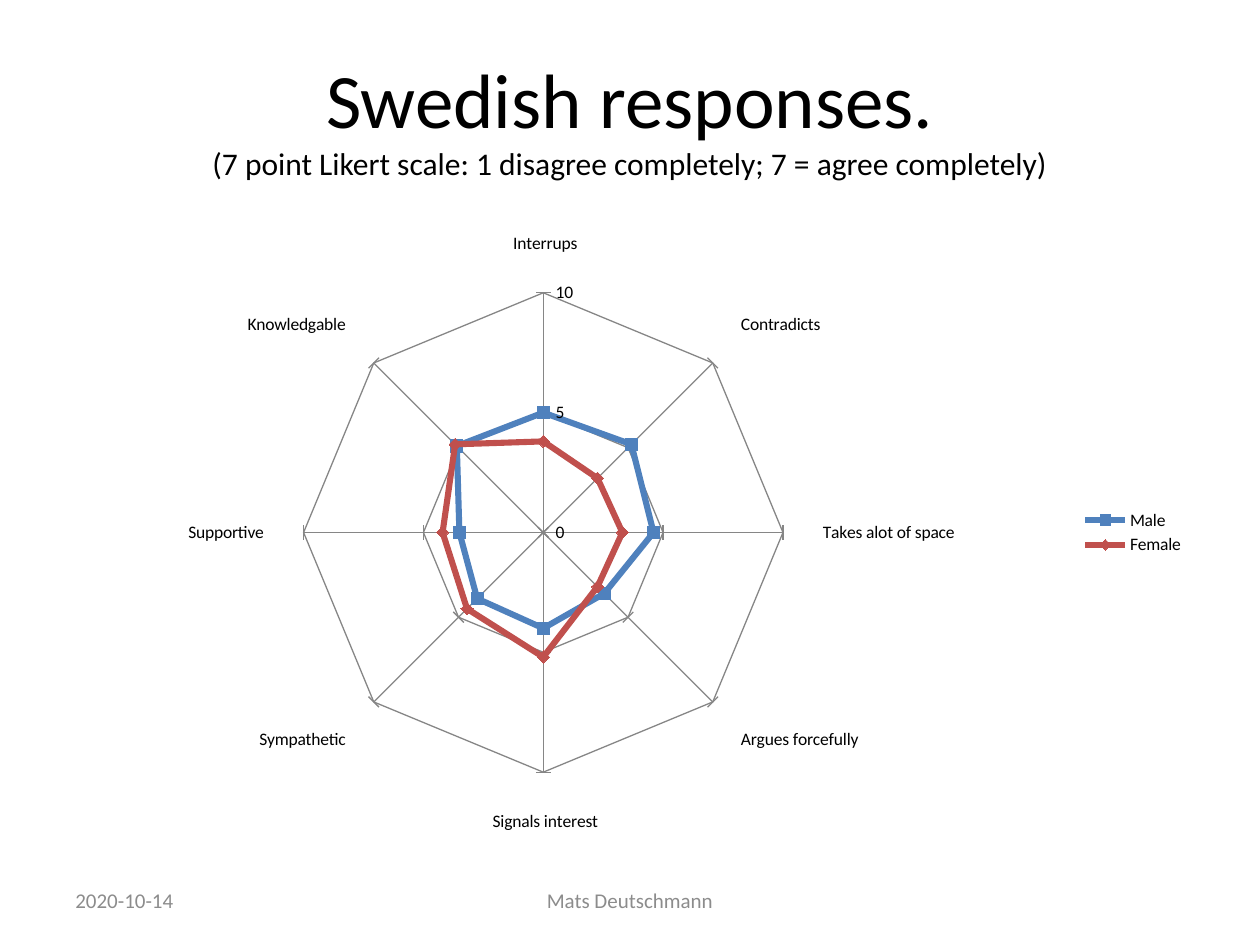
from pptx import Presentation
from pptx.chart.data import CategoryChartData
from pptx.dml.color import RGBColor
from pptx.enum import chart as ch, text
from pptx.util import Cm, Pt

FONT = "Calibri"
BLACK, GREY, GRID = "000000", "8C8C8C", "868686"
TRAITS = [" Interrups", "Contradicts", "Takes alot of space", "Argues forcefully",
          " Signals interest", "Sympathetic", "Supportive", "Knowledgable"]
GROUPS = [
    ("Male", [5, 5.2, 4.6, 3.6, 4, 3.9, 3.5, 5.1], "4F81BD", ch.XL_MARKER_STYLE.SQUARE),
    ("Female", [3.8, 3.2, 3.3, 3.2, 5.2, 4.5, 4.2, 5.2], "C0504D", ch.XL_MARKER_STYLE.DIAMOND),
]


def rgb(code):
    return RGBColor.from_string(code)


def style(font, size, color):
    font.name, font.size = FONT, Pt(size)
    font.color.rgb = rgb(color)


def place(shape, left, top, width, height):
    shape.left, shape.top = Cm(left), Cm(top)
    shape.width, shape.height = Cm(width), Cm(height)


def add_title(slide, head, note):
    title = slide.shapes.title
    place(title, 1.27, 0.76, 22.86, 3.18)
    frame = title.text_frame
    frame.vertical_anchor = text.MSO_ANCHOR.MIDDLE
    par = frame.paragraphs[0]
    par.alignment = text.PP_ALIGN.CENTER
    for size, words in ((44, head), (18, note)):
        if par.runs:
            par.add_line_break()
        run = par.add_run()
        run.text = words
        style(run.font, size, BLACK)


def add_footer(slide, words, left, width, align):
    box = slide.shapes.add_textbox(Cm(left), Cm(17.65), Cm(width), Cm(1.01))
    frame = box.text_frame
    frame.word_wrap = True
    frame.vertical_anchor = text.MSO_ANCHOR.MIDDLE
    par = frame.paragraphs[0]
    par.text, par.alignment = words, align
    style(par.font, 12, GREY)


def style_axis(axis, tick):
    axis.has_major_gridlines = True
    axis.major_tick_mark = tick
    axis.minor_tick_mark = ch.XL_TICK_MARK.NONE
    for part in (axis, axis.major_gridlines):
        part.format.line.color.rgb = rgb(GRID)
        part.format.line.width = Pt(0.75)


def style_series(series, color, mark):
    line = series.format.line
    line.color.rgb, line.width = rgb(color), Pt(3.5)
    marker = series.marker
    marker.style, marker.size = mark, 7
    marker.format.fill.solid()
    marker.format.fill.fore_color.rgb = rgb(color)
    marker.format.line.color.rgb = rgb(color)


def add_radar(slide):
    data = CategoryChartData()
    data.categories = TRAITS
    for name, vals, *_ in GROUPS:
        data.add_series(name, vals)
    chart = slide.shapes.add_chart(ch.XL_CHART_TYPE.RADAR_MARKERS, Cm(1.27), Cm(4.45),
                                   Cm(22.86), Cm(12.57), data).chart
    style(chart.font, 10, BLACK)
    chart.has_title = False
    chart.has_legend = True
    chart.legend.position = ch.XL_LEGEND_POSITION.RIGHT
    chart.legend.include_in_layout = False
    plot = chart.plots[0]
    plot.vary_by_categories = False
    for series, (_, _, color, mark) in zip(plot.series, GROUPS):
        style_series(series, color, mark)
    style_axis(chart.category_axis, ch.XL_TICK_MARK.OUTSIDE)
    scale = chart.value_axis
    style_axis(scale, ch.XL_TICK_MARK.CROSS)
    scale.minimum_scale, scale.maximum_scale, scale.major_unit = 0, 10, 5
    scale.tick_labels.number_format = "General"
    scale.tick_labels.number_format_is_linked = False


def main():
    deck = Presentation()
    deck.slide_width, deck.slide_height = Cm(25.4), Cm(19.05)
    slide = deck.slides.add_slide(deck.slide_layouts[5])
    add_title(slide, "Swedish responses.",
              "(7 point Likert scale: 1 disagree completely; 7 = agree completely)")
    add_footer(slide, "2020-10-14", 1.27, 5.92, text.PP_ALIGN.LEFT)
    add_footer(slide, "Mats Deutschmann", 8.68, 8.04, text.PP_ALIGN.CENTER)
    add_radar(slide)
    deck.save("out.pptx")


if __name__ == "__main__":
    main()
